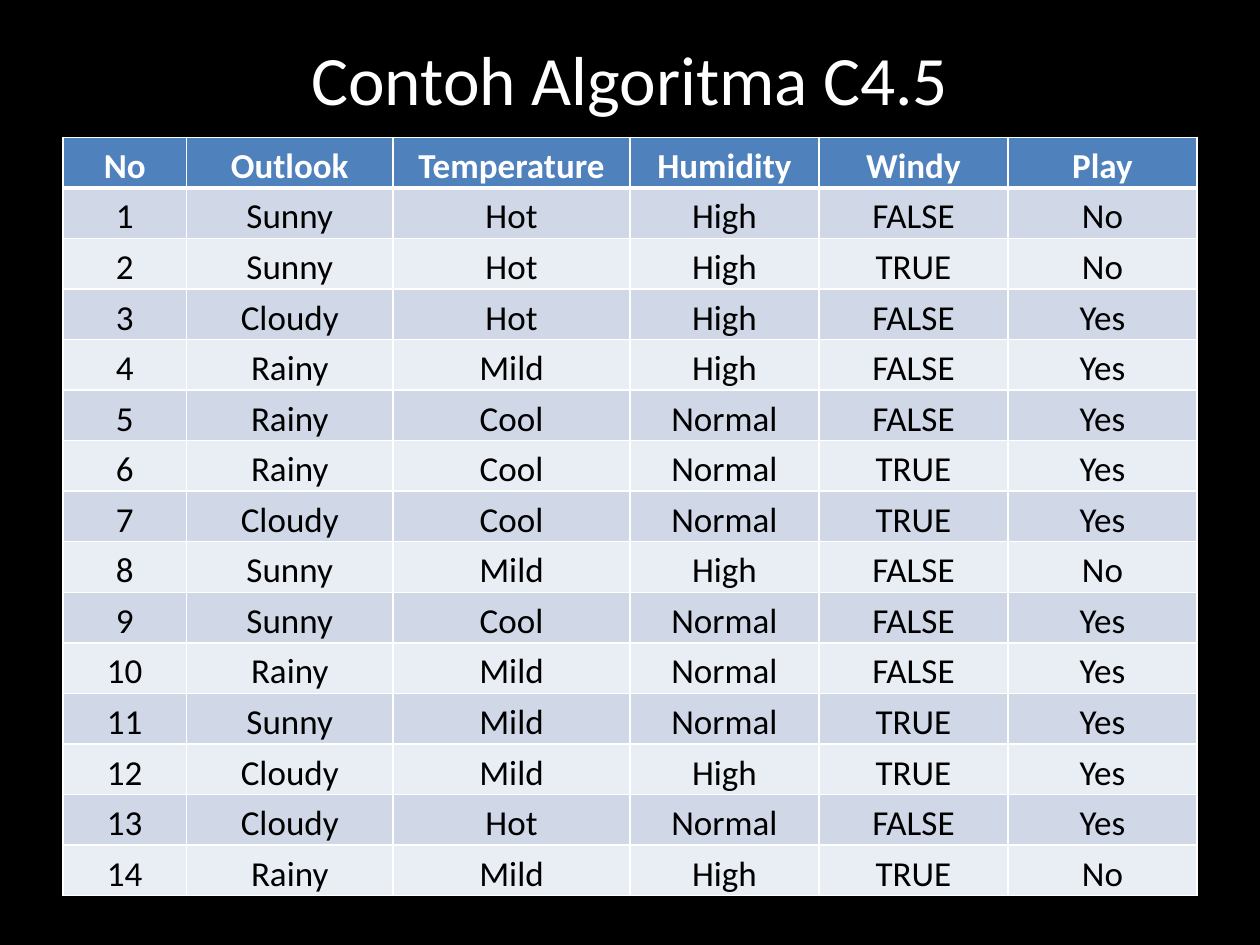
from lxml import etree
from pptx import Presentation
from pptx.dml.color import RGBColor
from pptx.enum.text import MSO_ANCHOR, PP_ALIGN
from pptx.oxml.ns import qn
from pptx.util import Inches, Pt

CENTER = PP_ALIGN.CENTER
MIDDLE = MSO_ANCHOR.MIDDLE
BOTTOM = MSO_ANCHOR.BOTTOM

BLACK, WHITE = "000000", "FFFFFF"
HEADER_FILL = "4F81BD"
BAND_FILLS = ("D0D8E8", "E9EDF4")

COLUMN_WIDTHS = (0.98, 1.64, 1.88, 1.5, 1.5, 1.5)
HEADINGS = ("No", "Outlook", "Temperature", "Humidity", "Windy", "Play")
WEATHER = (
    ("Sunny", "Hot", "High", "FALSE", "No"),
    ("Sunny", "Hot", "High", "TRUE", "No"),
    ("Cloudy", "Hot", "High", "FALSE", "Yes"),
    ("Rainy", "Mild", "High", "FALSE", "Yes"),
    ("Rainy", "Cool", "Normal", "FALSE", "Yes"),
    ("Rainy", "Cool", "Normal", "TRUE", "Yes"),
    ("Cloudy", "Cool", "Normal", "TRUE", "Yes"),
    ("Sunny", "Mild", "High", "FALSE", "No"),
    ("Sunny", "Cool", "Normal", "FALSE", "Yes"),
    ("Rainy", "Mild", "Normal", "FALSE", "Yes"),
    ("Sunny", "Mild", "Normal", "TRUE", "Yes"),
    ("Cloudy", "Mild", "High", "TRUE", "Yes"),
    ("Cloudy", "Hot", "Normal", "FALSE", "Yes"),
    ("Rainy", "Mild", "High", "TRUE", "No"),
)


def rgb(hex_color):
    return RGBColor.from_string(hex_color)


def set_values(target, values):
    for name, value in values.items():
        setattr(target, name, value)


class SlideBuilder:
    font_name = "Calibri"

    def __init__(self, page, background):
        self.page = page
        page.background.fill.solid()
        page.background.fill.fore_color.rgb = rgb(background)

    def add_text(self, frame, text, color, size, bold=False):
        para = frame.paragraphs[0]
        para.alignment = CENTER
        span = para.add_run()
        span.text = text
        set_values(span.font, {"name": self.font_name, "size": Pt(size), "bold": bold})
        span.font.color.rgb = rgb(color)

    def title(self, text, left, top, width, height):
        box = self.page.shapes.add_textbox(
            Inches(left), Inches(top), Inches(width), Inches(height))
        frame = box.text_frame
        set_values(frame, {
            "word_wrap": True, "vertical_anchor": MIDDLE,
            "margin_left": 0, "margin_right": 0, "margin_top": 0, "margin_bottom": 0,
        })
        self.add_text(frame, text, WHITE, 39.6)

    def borders(self, cell, top=1, bottom=1):
        """Draw white cell edges; top and bottom are line widths in points."""
        properties = cell._tc.get_or_add_tcPr()
        for tag, width in (("lnL", 1), ("lnR", 1), ("lnT", top), ("lnB", bottom)):
            line = etree.SubElement(properties, qn(f"a:{tag}"), w=str(Pt(width)))
            fill = etree.SubElement(line, qn("a:solidFill"))
            etree.SubElement(fill, qn("a:srgbClr"), val=WHITE)

    def cell(self, cell, text, fill, color, bold, **edges):
        set_values(cell, {
            "vertical_anchor": BOTTOM, "margin_left": Inches(0.01),
            "margin_right": Inches(0.01), "margin_top": Inches(0.01),
            "margin_bottom": 0,
        })
        self.borders(cell, **edges)
        cell.fill.solid()
        cell.fill.fore_color.rgb = rgb(fill)
        self.add_text(cell.text_frame, text, color, 20, bold)

    def table(self, headings, records, widths, left, top, height):
        rows = [headings, *records]
        table = self.page.shapes.add_table(
            len(rows), len(headings), Inches(left), Inches(top),
            Inches(sum(widths)), Inches(height)).table
        for column, width in zip(table.columns, widths):
            column.width = Inches(width)
        for index, values in enumerate(rows):
            if index == 0:
                look = {"fill": HEADER_FILL, "color": WHITE, "bold": True, "bottom": 3}
            else:
                look = {"fill": BAND_FILLS[(index - 1) % 2], "color": BLACK,
                        "bold": False, "top": 3 if index == 1 else 1}
            for cell, text in zip(table.rows[index].cells, values):
                self.cell(cell, text, **look)


def main():
    deck = Presentation()
    deck.slide_width, deck.slide_height = Inches(10), Inches(7.5)
    builder = SlideBuilder(deck.slides.add_slide(deck.slide_layouts[6]), BLACK)
    builder.title("Contoh Algoritma C4.5", 0.5, 0.3, 9, 0.64)
    records = [(str(number), *record) for number, record in enumerate(WEATHER, 1)]
    builder.table(HEADINGS, records, COLUMN_WIDTHS, 0.5, 1.09, 6.02)
    deck.save("out.pptx")


if __name__ == "__main__":
    main()
